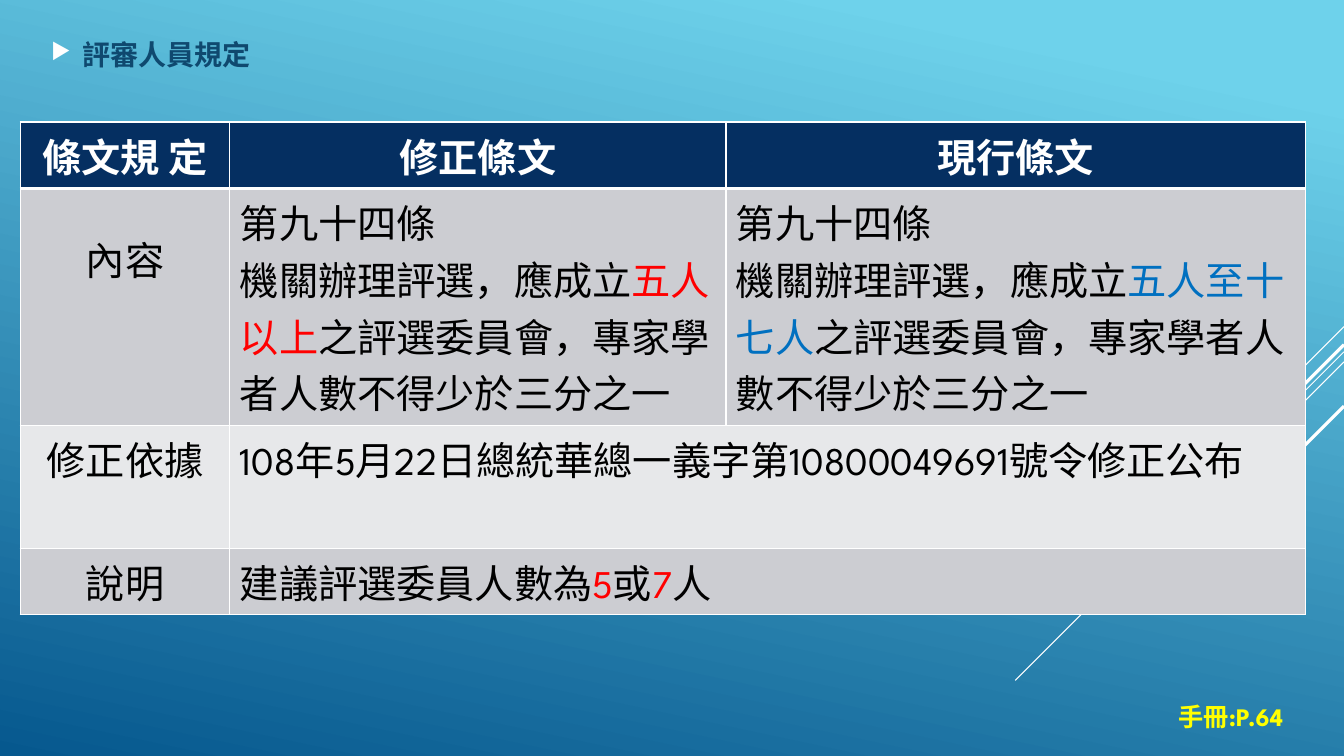
"""Build the slide comparing the amended and current rules on reviewers."""
from lxml import etree
from pptx import Presentation
from pptx.dml.color import RGBColor
from pptx.enum.shapes import MSO_CONNECTOR
from pptx.enum.text import MSO_ANCHOR, PP_ALIGN
from pptx.oxml.ns import qn
from pptx.util import Inches, Pt

STRAIGHT = MSO_CONNECTOR.STRAIGHT
MIDDLE = MSO_ANCHOR.MIDDLE
CENTER = PP_ALIGN.CENTER
LEFT = PP_ALIGN.LEFT

FONT = "League Spartan"
WHITE = RGBColor(0xFF, 0xFF, 0xFF)
BLACK = RGBColor(0x00, 0x00, 0x00)
RED = RGBColor(0xFF, 0x00, 0x00)
BLUE = RGBColor(0x00, 0x70, 0xC0)
YELLOW = RGBColor(0xFF, 0xFF, 0x00)
TITLE_BLUE = RGBColor(0x0F, 0x49, 0x6F)
HEADER_NAVY = RGBColor(0x05, 0x2F, 0x61)
BAND_DARK = RGBColor(0xCC, 0xCD, 0xD2)
BAND_LIGHT = RGBColor(0xE7, 0xE8, 0xEA)
SKY = RGBColor(0x6E, 0xD2, 0xEB)
DEEP_SEA = RGBColor(0x06, 0x58, 0x8E)


def style_run(run, size, color, bold):
    run.font.name = FONT
    run.font.size = Pt(size)
    run.font.bold = bold
    run.font.color.rgb = color


def add_border(cell, side, width):
    border = etree.SubElement(cell._tc.get_or_add_tcPr(), qn("a:" + side), w=str(Pt(width)))
    fill = etree.SubElement(border, qn("a:solidFill"))
    etree.SubElement(fill, qn("a:srgbClr"), val=str(WHITE))


presentation = Presentation()
presentation.slide_width = Inches(13.33)
presentation.slide_height = Inches(7.5)
slide = presentation.slides.add_slide(presentation.slide_layouts[6])

background = slide.background.fill
background.gradient()
background.gradient_angle = 360 - 102
for stop, position, color in zip(background.gradient_stops, (0.1, 1), (SKY, DEEP_SEA)):
    stop.position = position
    stop.color.rgb = color

DIAGONALS = [(3.24, 1, 0.75), (3.49, 3.26, 0.75), (3.59, 2.07, 0.75),
             (3.42, 1.91, 2.25), (4.03, 1.39, 2.25)]
for top, reach, width in DIAGONALS:
    diagonal = slide.shapes.add_connector(
        STRAIGHT, Inches(13.33), Inches(top), Inches(13.33 - reach), Inches(top + reach))
    diagonal.line.color.rgb = WHITE
    diagonal.line.width = Pt(width)
    etree.SubElement(diagonal._element.spPr, qn("a:effectLst"))

LABELS = [("評審人員規定", 0.41, 0.24, 9.33, 0.6, 20, TITLE_BLUE),
          ("手冊:P.64", 11.59, 6.91, 1.72, 0.4, 18, YELLOW)]
text_frames = []
for text, left, top, width, height, size, color in LABELS:
    label = slide.shapes.add_textbox(Inches(left), Inches(top), Inches(width), Inches(height))
    text_frame = label.text_frame
    text_frame.word_wrap = True
    text_frame.text = text
    style_run(text_frame.paragraphs[0].runs[0], size, color, True)
    text_frames.append(text_frame)

heading = text_frames[0]
heading.vertical_anchor = MIDDLE
heading.paragraphs[0].space_after = Pt(6)
bullet_properties = heading.paragraphs[0]._p.get_or_add_pPr()
bullet_properties.set("marL", str(Inches(0.31)))
bullet_properties.set("indent", str(Inches(-0.31)))
bullet_color = etree.SubElement(bullet_properties, qn("a:buClr"))
etree.SubElement(bullet_color, qn("a:srgbClr"), val=str(WHITE))
etree.SubElement(bullet_properties, qn("a:buSzPct"), val="80000")
etree.SubElement(bullet_properties, qn("a:buChar"), char="▶")

ARTICLE = [("第九十四條", BLACK)]
OPENING = ("機關辦理評選，應成立", BLACK)
ENDING = ("之評選委員會，專家學者人數不得少於三分之一", BLACK)
ROWS = [
    [[[("條文規 定", WHITE)]], [[("修正條文", WHITE)]], [[("現行條文", WHITE)]]],
    [[[("內容", BLACK)]],
     [ARTICLE, [OPENING, ("五人以上", RED), ENDING]],
     [ARTICLE, [OPENING, ("五人至十七人", BLUE), ENDING]]],
    [[[("修正依據", BLACK)]],
     [[("108年5月22日總統華總一義字第10800049691號令修正公布", BLACK)]]],
    [[[("說明", BLACK)]],
     [[("建議評選委員人數為", BLACK), ("5", RED), ("或", BLACK), ("7", RED), ("人", BLACK)]]],
]
COLUMN_WIDTHS = [2.08, 4.92, 5.75]
ROW_HEIGHTS = [0.66, 2.35, 1.22, 0.66]
ROW_FILLS = [HEADER_NAVY, BAND_DARK, BAND_LIGHT, BAND_DARK]

table = slide.shapes.add_table(
    len(ROWS), len(COLUMN_WIDTHS), Inches(0.2), Inches(1.21),
    Inches(sum(COLUMN_WIDTHS)), Inches(sum(ROW_HEIGHTS))).table
for column, width in zip(table.columns, COLUMN_WIDTHS):
    column.width = Inches(width)
for row_index, contents in enumerate(ROWS):
    table.rows[row_index].height = Inches(ROW_HEIGHTS[row_index])
    for column_index in range(len(COLUMN_WIDTHS)):
        cell = table.cell(row_index, column_index)
        add_border(cell, "lnL", 1)
        add_border(cell, "lnR", 1)
        add_border(cell, "lnT", 3 if row_index == 1 else 1)
        add_border(cell, "lnB", 3 if row_index == 0 else 1)
        cell.fill.solid()
        cell.fill.fore_color.rgb = ROW_FILLS[row_index]
    if len(contents) < len(COLUMN_WIDTHS):
        table.cell(row_index, 1).merge(table.cell(row_index, 2))
    for column_index, paragraphs in enumerate(contents):
        text_frame = table.cell(row_index, column_index).text_frame
        for paragraph_index, pieces in enumerate(paragraphs):
            paragraph = text_frame.add_paragraph() if paragraph_index else text_frame.paragraphs[0]
            paragraph.alignment = CENTER if row_index == 0 or column_index == 0 else LEFT
            for text, color in pieces:
                run = paragraph.add_run()
                run.text = text
                style_run(run, 28, color, row_index == 0)
table.cell(1, 0).margin_top = Inches(0.41)

presentation.save("out.pptx")
